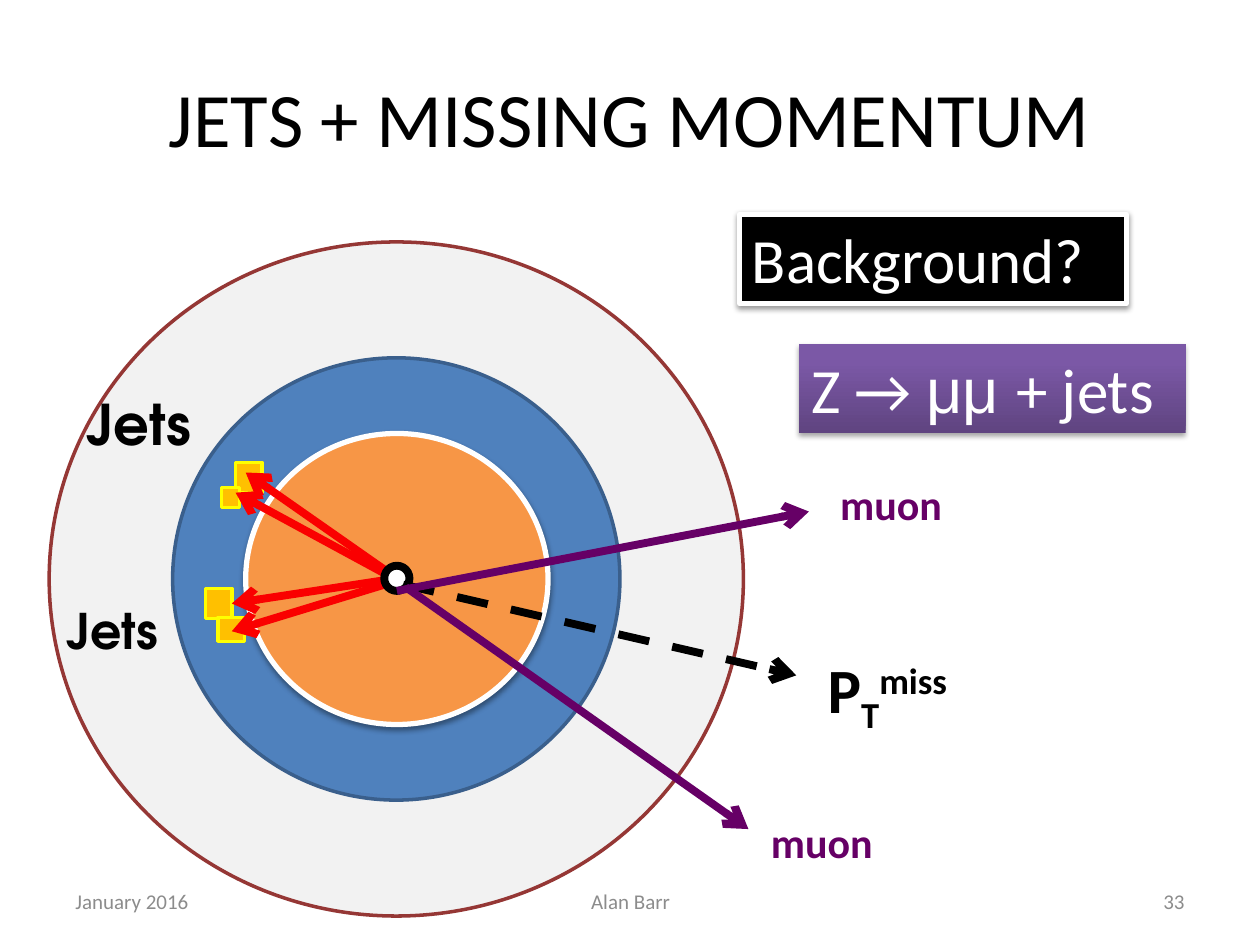
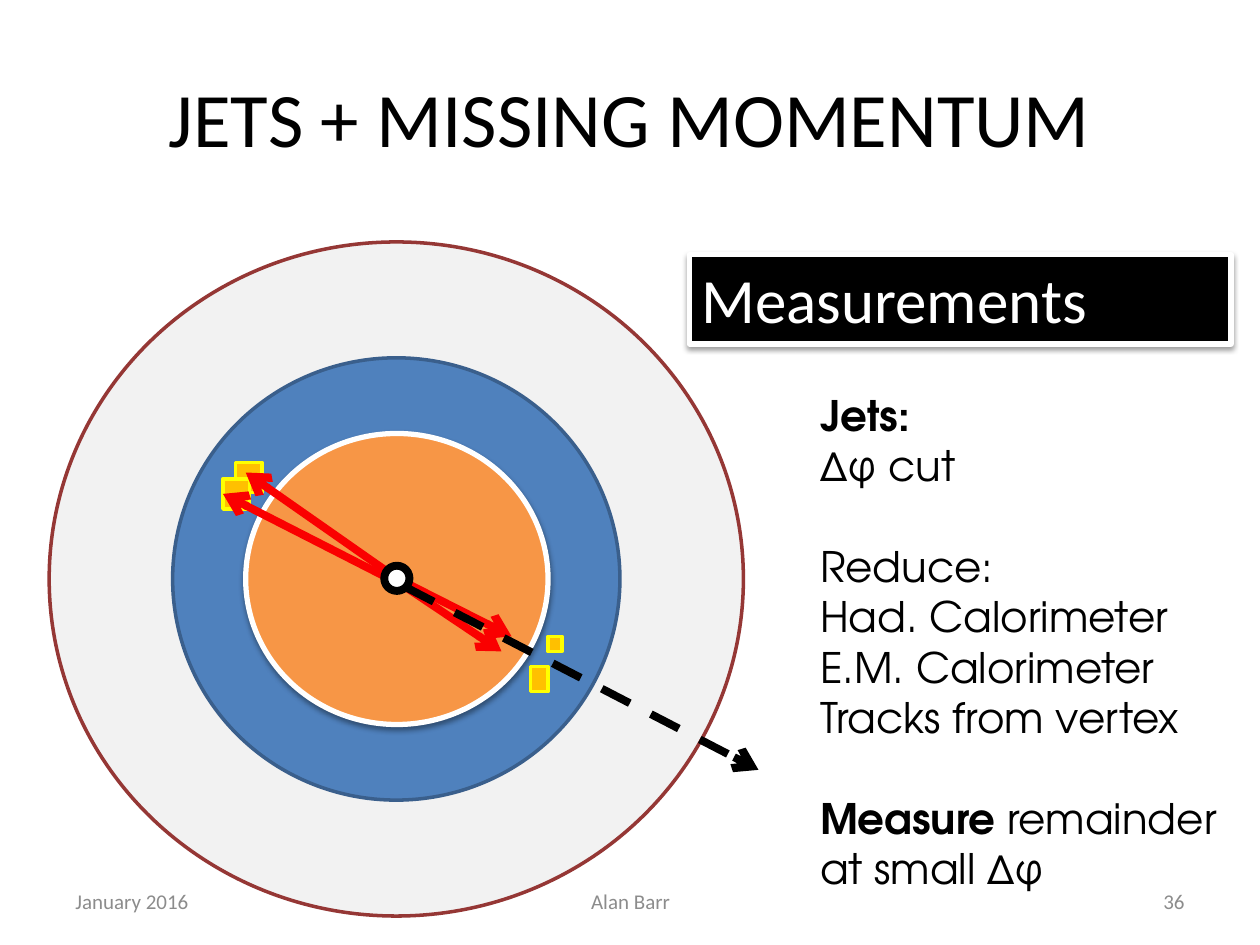
from dataclasses import dataclass
from typing import Any, NamedTuple, Optional

from lxml import etree
from pptx import Presentation
from pptx import util as u
from pptx.dml import color as clr
from pptx.enum import dml, shapes, text
from pptx.oxml import ns

IN = u.Inches
LEFT, CENTER, RIGHT = text.PP_ALIGN.LEFT, text.PP_ALIGN.CENTER, text.PP_ALIGN.RIGHT
TOP, MIDDLE = text.MSO_ANCHOR.TOP, text.MSO_ANCHOR.MIDDLE
OVAL, RECT = shapes.MSO_SHAPE.OVAL, shapes.MSO_SHAPE.RECTANGLE


@dataclass(frozen=True)
class Theme:
    body: str = "Calibri"
    display: str = "TeX Gyre Adventor"
    greek: str = "Arial"
    black: str = "000000"
    white: str = "FFFFFF"
    footer: str = "8C8C8C"
    jet: str = "FA0000"
    muon: str = "660066"
    tower: str = "FFC000"
    tower_edge: str = "FFFF00"
    muon_layer: str = "F2F2F2"
    muon_layer_edge: str = "953735"
    calorimeter: str = "4F81BD"
    calorimeter_edge: str = "3A5F8C"
    tracker: str = "F79646"
    purple: tuple = ((0, "5F4480"), (80, "7B58A6"), (100, "7C57A8"))
    title_size: int = 44
    banner_size: int = 36
    jet_size: int = 32
    small_jet_size: int = 28
    note_size: int = 24
    footer_size: int = 12
    track_width: float = 4.5
    note_gap: float = 28.8


T = Theme()


class Box(NamedTuple):
    left: float
    top: float
    width: float
    height: float


class Run(NamedTuple):
    text: str
    bold: bool = False
    baseline: int = 0
    font: str = T.body


class Para(NamedTuple):
    runs: tuple
    before: float = 0


class Solid(NamedTuple):
    """A preset shape with its fill, outline and optional shadow."""
    box: Box
    kind: Any
    fill: Any
    edge: Optional[str] = None
    width: float = 2
    shadow: Optional[tuple] = None


class Label(NamedTuple):
    box: Box
    paras: tuple
    size: float
    color: str = T.black
    align: Any = LEFT
    anchor: Any = TOP
    wrap: bool = False
    grow: bool = True


class Banner(NamedTuple):
    solid: Solid
    runs: tuple


class Join(NamedTuple):
    tower: int
    site: int


class Arrow(NamedTuple):
    start: tuple
    end: tuple
    color: str = T.jet
    dash: bool = False
    join: Optional[Join] = None


class Event(NamedTuple):
    number: str
    towers: tuple
    jets: tuple
    others: tuple
    banners: tuple
    labels: tuple


SOFT = (T.black, 38, 3.1, 1.6)
FIRM = (T.black, 35, 3.1, 1.8)
TITLE = "JETS + MISSING MOMENTUM"
TITLE_BOX = Box(0.5, 0.3, 9, 1.25)
DETECTOR = (
    Solid(Box(0.39, 1.92, 5.51, 5.35), OVAL, T.muon_layer, T.muon_layer_edge),
    Solid(Box(1.37, 2.84, 3.55, 3.51), OVAL, T.calorimeter, T.calorimeter_edge),
    Solid(Box(1.95, 3.44, 2.4, 2.31), OVAL, T.tracker, T.white, 3, SOFT),
)
VERTEX = Solid(Box(3.05, 4.49, 0.2, 0.2), OVAL, T.white, T.black, T.track_width)
CENTRE = (3.15, 4.59)
RIM = (3.22, 4.66)
UPPER_TOWER = Box(1.87, 3.67, 0.21, 0.24)
UPPER_JET = Arrow(CENTRE, (1.95, 3.75))


def rgb(value: str) -> clr.RGBColor:
    return clr.RGBColor.from_string(value)


def apply(obj: Any, fmt: dict) -> None:
    for name, value in fmt.items():
        setattr(obj, name, value)


def add_xml(parent: Any, tag: str, **attrs: Any) -> Any:
    return etree.SubElement(parent, ns.qn(tag), {k: str(v) for k, v in attrs.items()})


def add_color(parent: Any, value: str) -> Any:
    return add_xml(parent, "a:srgbClr", val=value)


def write(tf: Any, paras: tuple, size: float, color: str, align: Any = LEFT) -> None:
    for i, para in enumerate(paras):
        p = tf.paragraphs[0] if i == 0 else tf.add_paragraph()
        p.alignment = align
        if para.before:
            p.space_before = u.Pt(para.before)
        for run in para.runs:
            r = p.add_run()
            r.text = run.text
            apply(r.font, {"name": run.font, "size": u.Pt(size), "bold": run.bold})
            r.font.color.rgb = rgb(color)
            if run.baseline:
                r.font._element.set("baseline", str(run.baseline * 1000))


def fill_gradient(sp: Any, stops: tuple) -> None:
    """Fill upwards, with the first stop at the bottom."""
    sp.fill.gradient()
    sp.fill.gradient_angle = 90
    gs_list = sp._element.spPr.find(ns.qn("a:gradFill")).find(ns.qn("a:gsLst"))
    for gs in list(gs_list):
        gs_list.remove(gs)
    for pos, value in stops:
        add_color(add_xml(gs_list, "a:gs", pos=pos * 1000), value)


def draw_solid(s: Any, solid: Solid) -> Any:
    sp = s.shapes.add_shape(solid.kind, *map(IN, solid.box))
    if isinstance(solid.fill, tuple):
        fill_gradient(sp, solid.fill)
    else:
        sp.fill.solid()
        sp.fill.fore_color.rgb = rgb(solid.fill)
    if solid.edge:
        sp.line.color.rgb = rgb(solid.edge)
        sp.line.width = u.Pt(solid.width)
    else:
        sp.line.fill.background()
    sp.shadow.inherit = False
    if solid.shadow:
        value, alpha, blur, dist = solid.shadow
        effects = sp._element.spPr.find(ns.qn("a:effectLst"))
        shade = add_xml(effects, "a:outerShdw", blurRad=u.Pt(blur), dist=u.Pt(dist),
                        dir=90 * 60000, rotWithShape=0)
        add_xml(add_color(shade, value), "a:alpha", val=alpha * 1000)
    return sp


def draw_banner(s: Any, banner: Banner) -> None:
    tf = draw_solid(s, banner.solid).text_frame
    apply(tf, {"word_wrap": True, "vertical_anchor": TOP,
               "auto_size": text.MSO_AUTO_SIZE.SHAPE_TO_FIT_TEXT})
    write(tf, (Para(banner.runs),), T.banner_size, T.white)


def draw_label(s: Any, label: Label) -> None:
    tf = s.shapes.add_textbox(*map(IN, label.box)).text_frame
    sizing = text.MSO_AUTO_SIZE
    apply(tf, {"word_wrap": label.wrap, "vertical_anchor": label.anchor,
               "auto_size": sizing.SHAPE_TO_FIT_TEXT if label.grow else sizing.NONE})
    write(tf, label.paras, label.size, label.color, label.align)


def draw_arrow(s: Any, arrow: Arrow, towers: list) -> None:
    c = s.shapes.add_connector(shapes.MSO_CONNECTOR.STRAIGHT,
                               *map(IN, arrow.start + arrow.end))
    if arrow.join:
        c.end_connect(towers[arrow.join.tower], arrow.join.site)
    c.line.color.rgb = rgb(arrow.color)
    c.line.width = u.Pt(T.track_width)
    if arrow.dash:
        c.line.dash_style = dml.MSO_LINE.DASH
    add_xml(c.line._get_or_add_ln(), "a:tailEnd", type="arrow")
    add_xml(c._element.spPr, "a:effectLst")


def draw_title(s: Any) -> None:
    title = s.shapes.title
    apply(title, dict(zip(Box._fields, map(IN, TITLE_BOX))))
    title.text_frame.vertical_anchor = MIDDLE
    write(title.text_frame, (Para((Run(TITLE),)),), T.title_size, T.black, CENTER)


def draw_footer(s: Any, number: str) -> None:
    for left, width, words, align in ((0.5, 2.33, "January 2016", LEFT),
                                      (3.42, 3.17, "Alan Barr", CENTER),
                                      (7.17, 2.33, number, RIGHT)):
        draw_label(s, Label(Box(left, 6.95, width, 0.4), (Para((Run(words),)),),
                            T.footer_size, T.footer, align, MIDDLE, True, False))


def draw_event(prs: Any, event: Event) -> None:
    s = prs.slides.add_slide(prs.slide_layouts[5])
    draw_title(s)
    for layer in DETECTOR:
        draw_solid(s, layer)
    towers = [draw_solid(s, Solid(box, RECT, T.tower, T.tower_edge))
              for box in event.towers]
    for jet in event.jets:
        draw_arrow(s, jet, towers)
    draw_solid(s, VERTEX)
    for arrow in event.others:
        draw_arrow(s, arrow, towers)
    for banner in event.banners:
        draw_banner(s, banner)
    for label in event.labels:
        draw_label(s, label)
    draw_footer(s, event.number)


def black_banner(box: Box, words: str) -> Banner:
    return Banner(Solid(box, RECT, T.black, T.white, 3, SOFT), (Run(words),))


def jets_label(box: Box, size: float) -> Label:
    return Label(box, (Para((Run("Jets", True, font=T.display),)),), size)


def muon_label(left: float, top: float) -> Label:
    return Label(Box(left, top, 1.02, 0.5), (Para((Run("muon", True),)),),
                 T.note_size, T.muon)


def note(words: str, bold: str = "", before: float = 0) -> Para:
    """One line of the notes, with an optional bold start."""
    parts = ((bold, True), (words, False))
    return Para(tuple(Run(t, b, font=T.display) for t, b in parts if t), before)


BACKGROUND = Event(
    "33",
    (UPPER_TOWER, Box(1.63, 4.67, 0.21, 0.24), Box(1.73, 4.9, 0.21, 0.19),
     Box(1.76, 3.87, 0.14, 0.16)),
    (UPPER_JET, Arrow(CENTRE, (1.83, 4.77), join=Join(1, 3)),
     Arrow((3.16, 4.61), (1.87, 3.91)), Arrow((3.15, 4.61), (1.84, 5.01))),
    (Arrow((3.2, 4.64), (6.32, 5.36), T.black, True),
     Arrow((3.15, 4.69), (6.42, 4.06), T.muon), Arrow(RIM, (5.94, 6.58), T.muon)),
    (black_banner(Box(5.87, 1.7, 3.07, 0.71), "Background?"),
     Banner(Solid(Box(6.34, 2.73, 3.07, 0.71), RECT, T.purple, shadow=FIRM),
            (Run("Z → "), Run("μμ ", font=T.greek), Run("+ jets")))),
    (jets_label(Box(0.59, 3.04, 1.13, 0.64), T.jet_size),
     jets_label(Box(0.43, 4.72, 1.01, 0.57), T.small_jet_size),
     Label(Box(6.47, 5.11, 1.49, 0.71),
           (Para((Run("P", True), Run("T", True, -25), Run("miss", True, 30))),),
           T.banner_size),
     muon_label(6.57, 3.75), muon_label(6.02, 6.43)),
)
MEASUREMENTS = Event(
    "36",
    (UPPER_TOWER, Box(4.35, 5.05, 0.11, 0.12), Box(4.21, 5.29, 0.14, 0.2),
     Box(1.77, 3.8, 0.21, 0.24)),
    (Arrow(CENTRE, (4.06, 5.05)), Arrow((3.16, 4.62), (3.98, 5.17)), UPPER_JET,
     Arrow(RIM, (1.77, 3.92), join=Join(3, 1))),
    (Arrow(RIM, (6.02, 6.11), T.black, True),),
    (black_banner(Box(5.47, 2.02, 4.3, 0.71), "Measurements"),),
    (Label(Box(6.41, 3.04, 3.38, 4.14),
           (note("", "Jets:"), note("Δφ cut"), note("Reduce:", before=T.note_gap),
            note("Had. Calorimeter"), note("E.M. Calorimeter"),
            note("Tracks from vertex"), note(" remainder", "Measure", T.note_gap),
            note("at small Δφ")), T.note_size),),
)

if __name__ == "__main__":
    prs = Presentation()
    apply(prs, {"slide_width": IN(10), "slide_height": IN(7.5)})
    for event in (BACKGROUND, MEASUREMENTS):
        draw_event(prs, event)
    prs.save("out.pptx")
